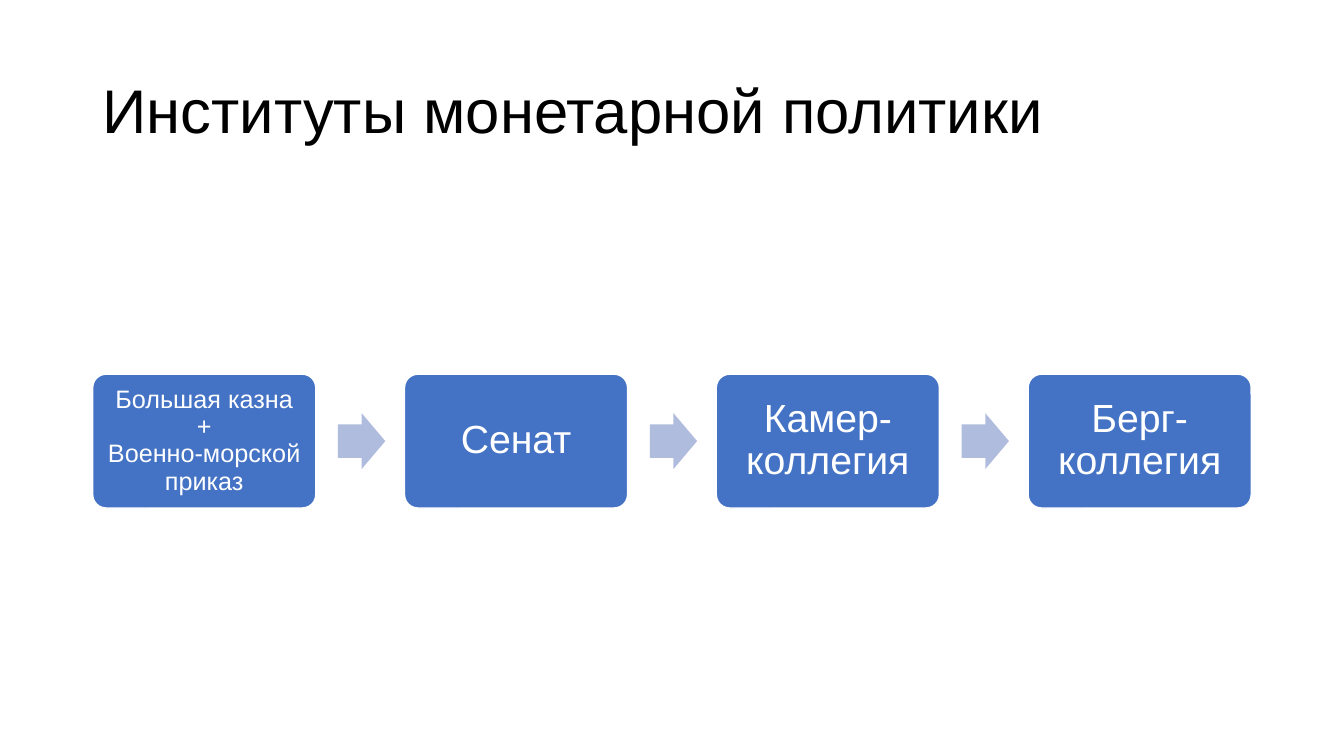
from pptx import Presentation
from pptx.dml.color import RGBColor
from pptx.enum.shapes import MSO_SHAPE as SHAPE
from pptx.enum.text import MSO_ANCHOR as ANCHOR, PP_ALIGN as ALIGN
from pptx.util import Inches, Pt

BLACK = RGBColor(0x00, 0x00, 0x00)
WHITE = RGBColor(0xFF, 0xFF, 0xFF)
BLUE = RGBColor(0x44, 0x72, 0xC4)
PALE_BLUE = RGBColor(0xB0, 0xBC, 0xDE)

LEFT = 6.9
STEP = 23.2
BOX_W, BOX_H = 16.6, 17.7
ARROW_W, ARROW_H = 3.52, 7.4
ARROW_OFFSET = 18.25
MIDDLE = 58.35

INSTITUTIONS = [
    (["Большая казна", "+", "Военно-морской приказ"], 18),
    (["Сенат"], 28),
    (["Камер-коллегия"], 28),
    (["Берг-коллегия"], 28),
]


class FlowSlide:
    """Draws styled elements on one slide, placed in percent of its size."""

    font = "Arial"
    line_spacing = 0.9

    def __init__(self, prs):
        self.width, self.height = prs.slide_width, prs.slide_height
        self.slide = prs.slides.add_slide(prs.slide_layouts[6])

    def area(self, x, y, w, h):
        return (int(self.width * x / 100), int(self.height * y / 100),
                int(self.width * w / 100), int(self.height * h / 100))

    def add_text(self, sp, lines, size, color, align):
        tf = sp.text_frame
        tf.word_wrap = True
        tf.vertical_anchor = ANCHOR.MIDDLE
        p = tf.paragraphs[0]
        p.alignment = align
        p.line_spacing = self.line_spacing
        for i, line in enumerate(lines):
            if i:
                p.add_line_break()
            r = p.add_run()
            r.text = line
            r.font.name = self.font
            r.font.size = Pt(size)
            r.font.color.rgb = color
        return tf

    def title(self, text, x, y, w, h):
        sp = self.slide.shapes.add_textbox(*self.area(x, y, w, h))
        self.add_text(sp, [text], 44, BLACK, ALIGN.LEFT)

    def shape(self, kind, fill, adjustments, x, y, w, h):
        sp = self.slide.shapes.add_shape(kind, *self.area(x, y, w, h))
        sp.shadow.inherit = False
        sp.fill.solid()
        sp.fill.fore_color.rgb = fill
        sp.line.fill.background()
        for i, value in enumerate(adjustments):
            sp.adjustments[i] = value
        return sp

    def box(self, lines, size, x):
        sp = self.shape(SHAPE.ROUNDED_RECTANGLE, BLUE, [0.1],
                        x, MIDDLE - BOX_H / 2, BOX_W, BOX_H)
        sp.line.color.rgb = WHITE
        sp.line.width = Pt(1)
        tf = self.add_text(sp, lines, size, WHITE, ALIGN.CENTER)
        tf.margin_left = tf.margin_right = Inches(0.07)
        tf.margin_top = tf.margin_bottom = Inches(0.07)

    def arrow(self, x):
        self.shape(SHAPE.RIGHT_ARROW, PALE_BLUE, [0.6, 0.5],
                   x, MIDDLE - ARROW_H / 2, ARROW_W, ARROW_H)


def main():
    prs = Presentation()
    prs.slide_width, prs.slide_height = Inches(13.33), Inches(7.5)
    s = FlowSlide(prs)
    s.title("Институты монетарной политики", LEFT, 5.3, 86.2, 19.3)
    for i, (lines, size) in enumerate(INSTITUTIONS):
        x = LEFT + i * STEP
        s.box(lines, size, x)
        if i < len(INSTITUTIONS) - 1:
            s.arrow(x + ARROW_OFFSET)
    prs.save("out.pptx")


if __name__ == "__main__":
    main()
